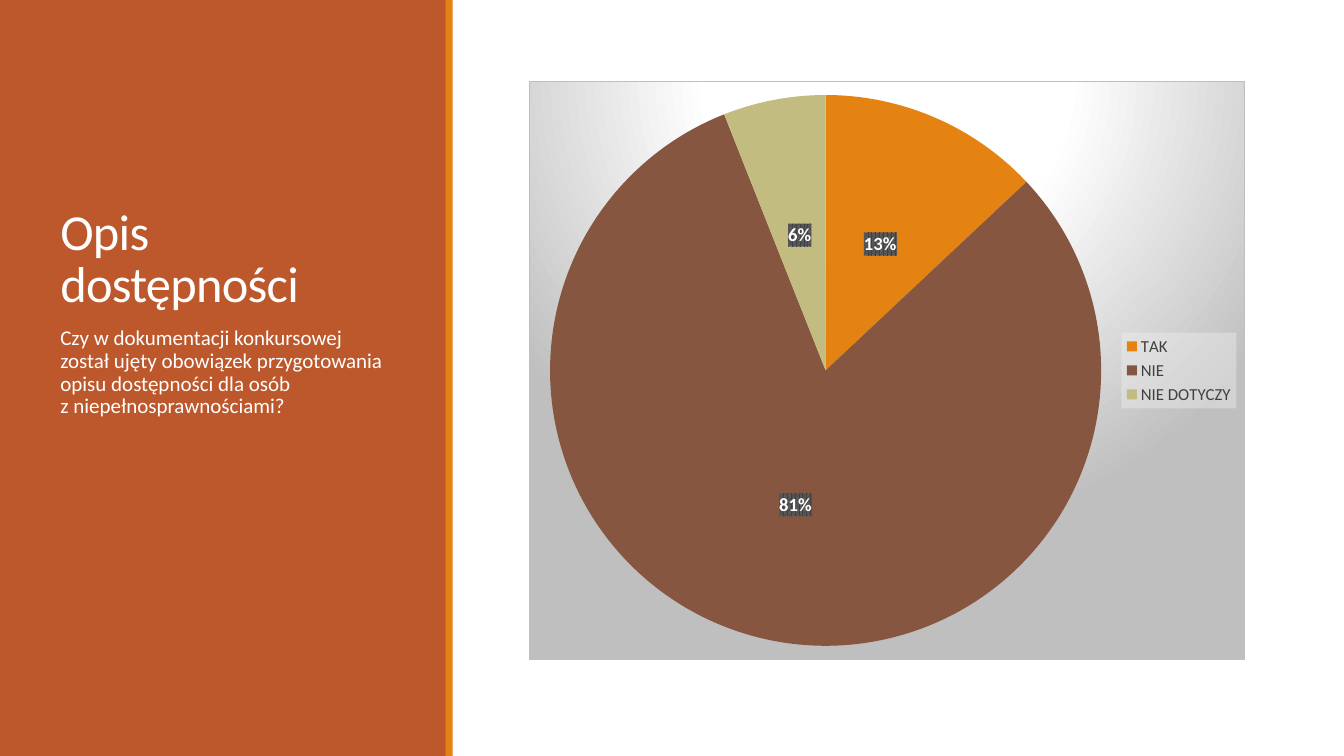
from lxml import etree
from pptx import Presentation
from pptx import util as u
from pptx.chart.data import CategoryChartData
from pptx.dml.color import RGBColor
from pptx.enum import chart as ch, shapes, text
from pptx.oxml import ns


def hue(code):
    return RGBColor.from_string(code)


def style(txpr, inner):
    """Put chart shape properties just before the given text properties."""
    txpr.addprevious(etree.fromstring(
        f'<c:spPr {ns.nsdecls("c", "a")}>{inner}</c:spPr>'))


deck = Presentation()
deck.slide_width, deck.slide_height = u.Inches(13.33), u.Inches(7.5)
slide = deck.slides.add_slide(deck.slide_layouts[6])

# Side panel and its accent strip
for left, width, fill in [(0, 4.43, "BD582C"), (4.42, 0.07, "E48312")]:
    bar = slide.shapes.add_shape(
        shapes.MSO_SHAPE.RECTANGLE, u.Inches(left), 0, u.Inches(width), u.Inches(7.5))
    bar.shadow.inherit = False
    bar.fill.solid()
    bar.fill.fore_color.rgb = hue(fill)
    bar.line.fill.background()

# Title and question
title = "Opis dostępności"
query = ("Czy w dokumentacji konkursowej został ujęty obowiązek przygotowania "
         "opisu dostępności dla osób \nz niepełnosprawnościami?")
for words, top, height, size, space, before, after, anchor in [
        (title, 0.65, 2.5, 36, 0.85, 0, 0, text.MSO_ANCHOR.BOTTOM),
        (query, 3.2, 3.7, 15, 0.9, 12, 2, text.MSO_ANCHOR.TOP)]:
    box = slide.shapes.add_textbox(
        u.Inches(0.5), u.Inches(top), u.Inches(3.5), u.Inches(height))
    frame = box.text_frame
    frame.word_wrap = True
    frame.vertical_anchor = anchor
    para = frame.paragraphs[0]
    para.text = words
    para.line_spacing = space
    para.space_before, para.space_after = u.Pt(before), u.Pt(after)
    para.font.name, para.font.size = "Calibri", u.Pt(size)
    para.font.color.rgb = hue("FFFFFF")
    if words == title:
        para.runs[0].font._element.set("spc", "-50")

# Pie chart
data = CategoryChartData()
data.categories = ["TAK", "NIE", "NIE DOTYCZY"]
data.add_series("Series 1", [13, 81, 6])
chart = slide.shapes.add_chart(
    ch.XL_CHART_TYPE.PIE, u.Inches(5.25), u.Inches(0.8),
    u.Inches(7.1), u.Inches(5.75), data).chart
chart.has_title = False
chart.font.name, chart.font.size = "Calibri", u.Pt(10)
chart.font.color.rgb = hue("000000")
plot = chart.plots[0]
plot.vary_by_categories = True
for i, fill in enumerate(["E48312", "865640", "C2BC80"]):
    slice_fill = plot.series[0].points[i].format.fill
    slice_fill.solid()
    slice_fill.fore_color.rgb = hue(fill)

# Chart background: round gradient centred above the frame
stops = "".join(f'<a:gs pos="{pos}000"><a:srgbClr val="{code}"/></a:gs>'
                for pos, code in [(0, "FFFFFF"), (39, "FFFFFF"), (100, "BFBFBF")])
style(chart._chartSpace.find(ns.qn("c:txPr")),
      f'<a:gradFill><a:gsLst>{stops}</a:gsLst><a:path path="circle">'
      '<a:fillToRect l="50000" t="-80000" r="50000" b="180000"/></a:path></a:gradFill>'
      '<a:ln w="9525"><a:solidFill><a:srgbClr val="BFBFBF"/></a:solidFill></a:ln>')

# Percent labels on a dark pattern
plot.has_data_labels = True
tags = plot.series[0].data_labels
tags.show_percentage, tags.show_value = True, False
tags.number_format, tags.number_format_is_linked = "0%", False
tags.position = ch.XL_LABEL_POSITION.CENTER
tags.font.name, tags.font.size, tags.font.bold = "Calibri", u.Pt(13.3), True
tags.font.color.rgb = hue("FFFFFF")
style(tags._element.find(ns.qn("c:txPr")),
      '<a:pattFill prst="pct75"><a:fgClr><a:srgbClr val="404040"/></a:fgClr>'
      '<a:bgClr><a:srgbClr val="595959"/></a:bgClr></a:pattFill><a:ln><a:noFill/></a:ln>')

# Legend on a pale, see-through panel
chart.has_legend = True
key = chart.legend
key.position = ch.XL_LEGEND_POSITION.RIGHT
key.include_in_layout = False
key.font.name, key.font.size = "Calibri", u.Pt(12)
key.font.color.rgb = hue("404040")
style(key._element.find(ns.qn("c:txPr")),
      '<a:solidFill><a:srgbClr val="F2F2F2"><a:alpha val="39000"/></a:srgbClr>'
      '</a:solidFill><a:ln><a:noFill/></a:ln>')

deck.save("out.pptx")
